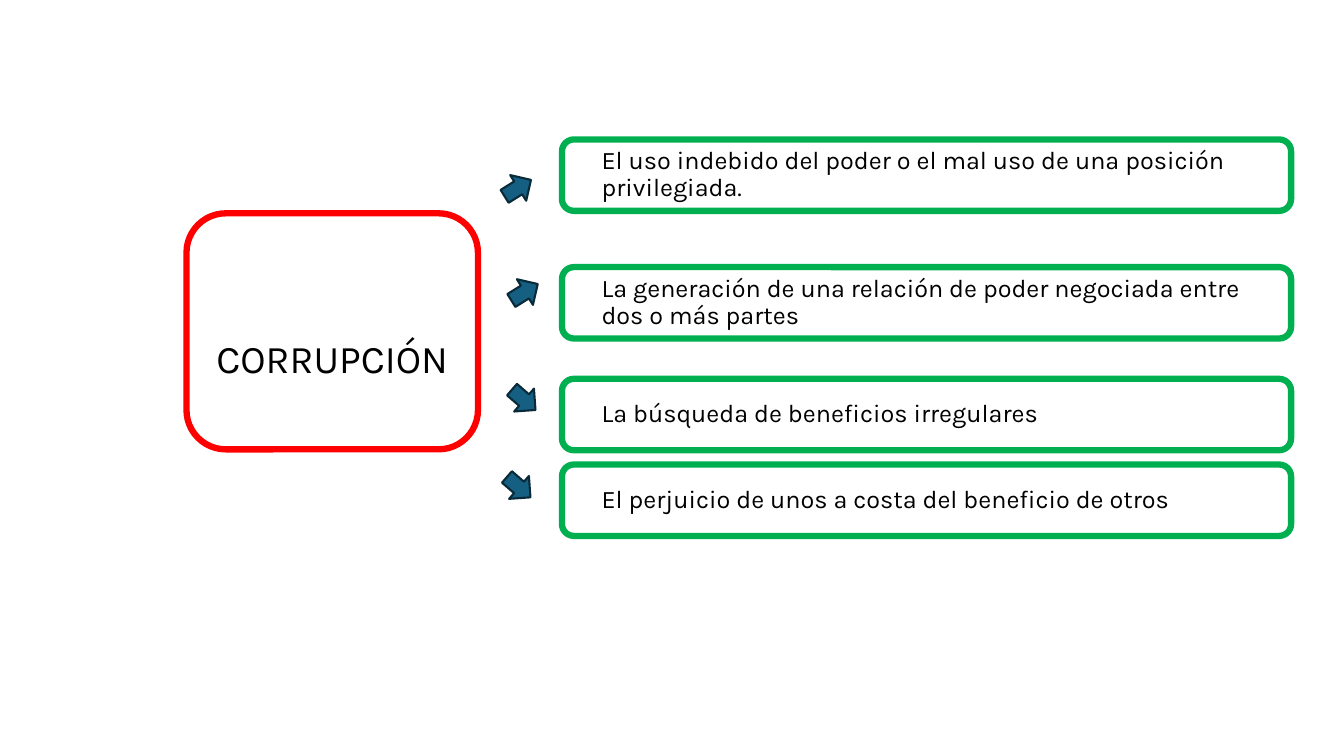
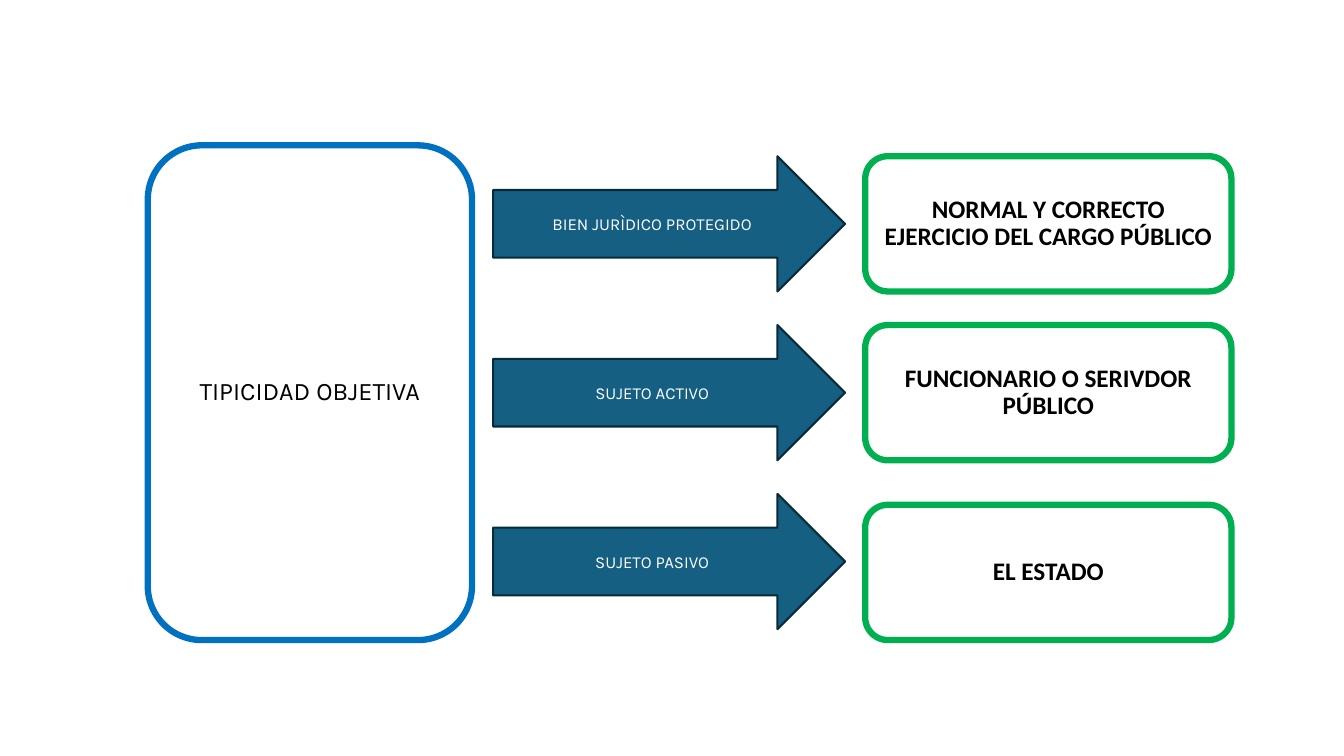
"""Build two slides on corruption and its objective elements."""
from dataclasses import dataclass
from typing import Optional

from pptx import Presentation
from pptx.dml.color import RGBColor
from pptx.enum.shapes import MSO_SHAPE as Preset
from pptx.enum.text import MSO_ANCHOR as Anchor, PP_ALIGN as Align
from pptx.util import Emu, Pt

CELL = 762000
COLUMNS, ROWS = 16, 9
BLANK_LAYOUT = 6
COLORS = {
    "ink": "000000",
    "paper": "FFFFFF",
    "red": "FF0000",
    "green": "00B050",
    "blue": "0070C0",
    "teal": "156082",
    "teal_edge": "092A39",
}


@dataclass(frozen=True)
class Area:
    """A rectangle in grid columns and rows."""
    left: float
    top: float
    width: float
    height: float


@dataclass(frozen=True)
class TextStyle:
    """The look of a run of text and its paragraph."""
    size: float = 18
    font: str = "Karla"
    color: str = "ink"
    bold: bool = False
    spacing: float = 0.9
    align: Align = Align.CENTER


@dataclass(frozen=True)
class ShapeStyle:
    """The preset, outline and fill of a shape."""
    preset: Preset
    line: str
    line_width: float
    fill: Optional[str] = None


@dataclass(frozen=True)
class Cause:
    """A statement with its frame top and its pointer."""
    text: str
    frame_top: float
    arrow_left: float
    arrow_top: float
    rotation: float


@dataclass(frozen=True)
class Element:
    """A labelled arrow, its answer and the answer's row offset."""
    label: str
    answer: str
    offset: float = 0


def frame_style(color: str) -> ShapeStyle:
    """Return the thick rounded outline in a colour."""
    return ShapeStyle(Preset.ROUNDED_RECTANGLE, color, 4.5)


ARROW = ShapeStyle(Preset.RIGHT_ARROW, "teal_edge", 1.5, "teal")
GREEN_FRAME = frame_style("green")
PANEL_TEXT = TextStyle()
CAUSE_TEXT = TextStyle(align=Align.LEFT)
HEADING_TEXT = TextStyle(size=28, spacing=0.8)
LABEL_TEXT = TextStyle(size=12, color="paper", spacing=1.0)
ANSWER_TEXT = TextStyle(font="Calibri", bold=True)

UP, DOWN = 328, 40.9
CAUSES = (
    Cause("El uso indebido del poder o el mal uso de una posición privilegiada.",
          1.66, 5.98, 2.06, UP),
    Cause("La generación de una relación de poder negociada entre dos o más partes",
          3.18, 6.06, 3.3, UP),
    Cause("La búsqueda de beneficios irregulares", 4.51, 6.05, 4.58, DOWN),
    Cause("El perjuicio de unos a costa del beneficio de otros", 5.53, 5.99, 5.62, DOWN),
)
ELEMENTS = (
    Element("BIEN JURÌDICO PROTEGIDO", "NORMAL Y CORRECTO EJERCICIO DEL CARGO PÚBLICO"),
    Element("SUJETO ACTIVO", "FUNCIONARIO O SERIVDOR PÚBLICO"),
    Element("SUJETO PASIVO", "EL ESTADO", 0.13),
)
ELEMENT_TOP, ELEMENT_STEP, ELEMENT_HEIGHT = 1.86, 2.01, 1.61


def cells(count: float) -> Emu:
    """Convert grid cells to a length."""
    return Emu(round(count * CELL))


def rgb(name: str) -> RGBColor:
    """Look up a named colour."""
    return RGBColor.from_string(COLORS[name])


def apply_format(target, values: dict) -> None:
    """Set each attribute in a dict of format values."""
    for name, value in values.items():
        setattr(target, name, value)


def write(para, text: str, style: TextStyle) -> None:
    """Fill a paragraph with styled text."""
    apply_format(para, {"alignment": style.align, "line_spacing": style.spacing})
    span = para.add_run()
    span.text = text
    apply_format(span.font, {"size": Pt(style.size), "name": style.font, "bold": style.bold})
    span.font.color.rgb = rgb(style.color)


def add_box(page, area: Area, style: ShapeStyle, text: str = "",
            text_style: TextStyle = PANEL_TEXT, rotation: float = 0):
    """Draw a preset shape, with text if there is any."""
    box = page.shapes.add_shape(style.preset, cells(area.left), cells(area.top),
                                cells(area.width), cells(area.height))
    box.shadow.inherit = False
    box.rotation = rotation
    box.line.width = Pt(style.line_width)
    box.line.color.rgb = rgb(style.line)
    if style.fill:
        box.fill.solid()
        box.fill.fore_color.rgb = rgb(style.fill)
    else:
        box.fill.background()
    if text:
        apply_format(box.text_frame, {"word_wrap": True, "vertical_anchor": Anchor.MIDDLE})
        write(box.text_frame.paragraphs[0], text, text_style)
    return box


def build_corruption(deck) -> None:
    """Add the slide that explains corruption."""
    page = deck.slides.add_slide(deck.slide_layouts[BLANK_LAYOUT])
    heading = add_box(page, Area(2.22, 2.54, 3.47, 2.81), frame_style("red"),
                      "CORRUPCIÓN", HEADING_TEXT)
    heading.text_frame.margin_top = cells(0.79)
    margins = {"margin_left": cells(0.43), "margin_right": cells(0.36),
               "margin_top": 0, "margin_bottom": 0}
    for cause in CAUSES:
        add_box(page, Area(cause.arrow_left, cause.arrow_top, 0.37, 0.36), ARROW,
                rotation=cause.rotation)
        frame = add_box(page, Area(6.69, cause.frame_top, 8.68, 0.85), GREEN_FRAME,
                        cause.text, CAUSE_TEXT)
        apply_format(frame.text_frame, margins)


def build_elements(deck) -> None:
    """Add the slide that lists the objective elements."""
    page = deck.slides.add_slide(deck.slide_layouts[BLANK_LAYOUT])
    add_box(page, Area(1.76, 1.73, 3.86, 5.89), frame_style("blue"), "TIPICIDAD OBJETIVA")
    for index, element in enumerate(ELEMENTS):
        top = ELEMENT_TOP + index * ELEMENT_STEP
        add_box(page, Area(5.87, top, 4.19, ELEMENT_HEIGHT), ARROW, element.label, LABEL_TEXT)
        add_box(page, Area(10.3, top + element.offset, 4.36, ELEMENT_HEIGHT), GREEN_FRAME,
                element.answer, ANSWER_TEXT)


def main() -> None:
    """Build and save the deck."""
    deck = Presentation()
    apply_format(deck, {"slide_width": cells(COLUMNS), "slide_height": cells(ROWS)})
    build_corruption(deck)
    build_elements(deck)
    deck.save("out.pptx")


if __name__ == "__main__":
    main()
